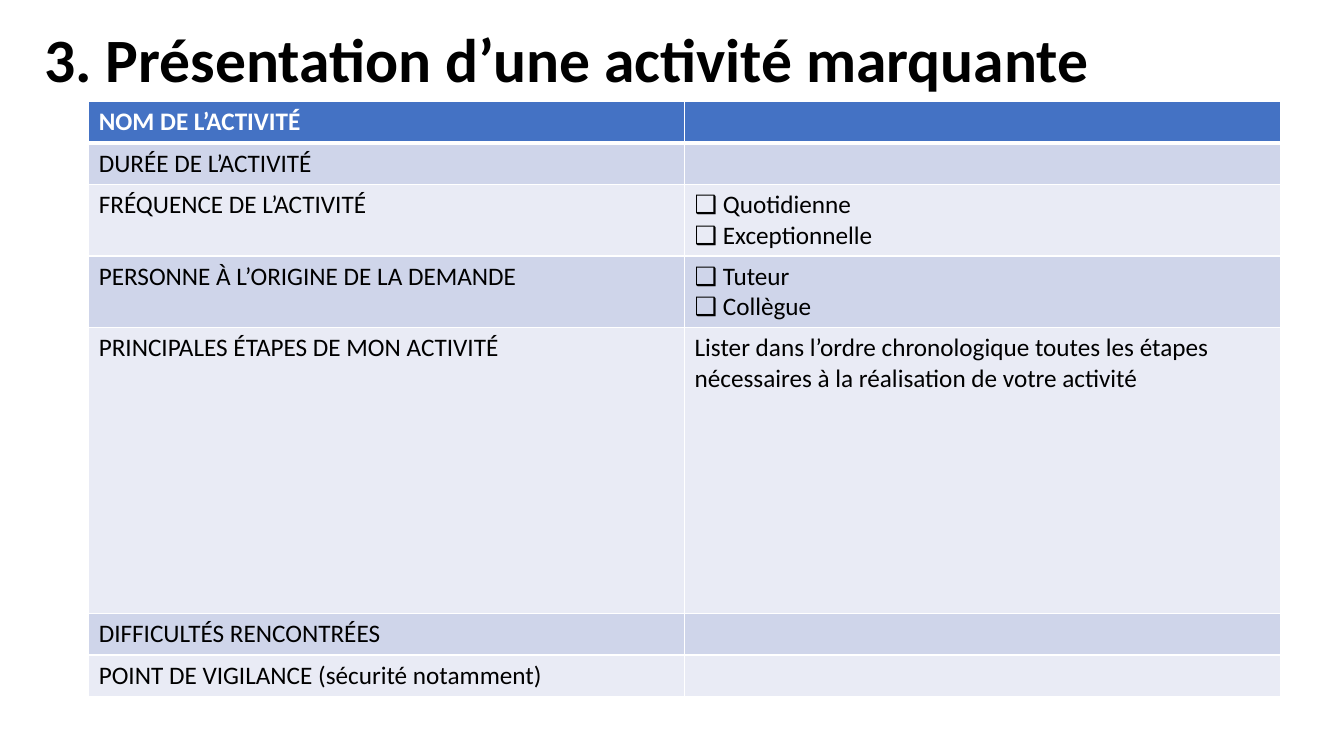
from dataclasses import dataclass

from lxml import etree
from pptx import Presentation
from pptx.dml.color import RGBColor
from pptx.enum import text
from pptx.oxml import ns
from pptx.util import Inches, Pt


@dataclass(frozen=True)
class Theme:
    font: str = "Calibri"
    title_size: int = 44
    body_size: int = 18
    ink: str = "000000"
    white: str = "FFFFFF"
    header: str = "4472C4"
    bands: tuple = ("E9EBF5", "CFD5EA")
    border: int = 1
    header_border: int = 3


THEME = Theme()
ROWS = [
    ("NOM DE L’ACTIVITÉ", "", 0.41),
    ("DURÉE DE L’ACTIVITÉ", "", 0.41),
    ("FRÉQUENCE DE L’ACTIVITÉ", "❑ Quotidienne\n❑ Exceptionnelle", 0.71),
    ("PERSONNE À L’ORIGINE DE LA DEMANDE", "❑ Tuteur\n❑ Collègue", 0.71),
    (
        "PRINCIPALES ÉTAPES DE MON ACTIVITÉ",
        "Lister dans l’ordre chronologique toutes les étapes "
        "nécessaires à la réalisation de votre activité",
        2.84,
    ),
    ("DIFFICULTÉS RENCONTRÉES", "", 0.41),
    ("POINT DE VIGILANCE (sécurité notamment)", "", 0.41),
]


def style_paragraph(paragraph, size, color, bold):
    font = paragraph.font
    font.name = THEME.font
    font.size = Pt(size)
    font.bold = bold
    font.color.rgb = RGBColor.from_string(color)


def add_title(slide, wording):
    shape = slide.shapes.add_textbox(Inches(0.34), Inches(-0.1), Inches(11.5), Inches(1.45))
    frame = shape.text_frame
    frame.word_wrap = True
    frame.vertical_anchor = text.MSO_ANCHOR.MIDDLE
    paragraph = frame.paragraphs[0]
    paragraph.text = wording
    paragraph.alignment = text.PP_ALIGN.JUSTIFY
    paragraph.line_spacing = 0.9
    style_paragraph(paragraph, THEME.title_size, THEME.ink, True)


def set_borders(cell, top, bottom):
    properties = cell._tc.get_or_add_tcPr()
    widths = {"lnL": THEME.border, "lnR": THEME.border, "lnT": top, "lnB": bottom}
    for position, (side, width) in enumerate(widths.items()):
        line = etree.Element(ns.qn(f"a:{side}"), w=str(Pt(width)))
        fill = etree.SubElement(line, ns.qn("a:solidFill"))
        etree.SubElement(fill, ns.qn("a:srgbClr"), val=THEME.white)
        properties.insert(position, line)


def fill_cell(cell, wording, row):
    is_header = row == 0
    cell.text = wording
    for paragraph in cell.text_frame.paragraphs:
        color = THEME.white if is_header else THEME.ink
        style_paragraph(paragraph, THEME.body_size, color, is_header)
    cell.fill.solid()
    background = THEME.header if is_header else THEME.bands[row % 2]
    cell.fill.fore_color.rgb = RGBColor.from_string(background)
    set_borders(
        cell,
        THEME.header_border if row == 1 else THEME.border,
        THEME.header_border if is_header else THEME.border,
    )


def add_activity_table(slide):
    total = sum(height for *_, height in ROWS)
    frame = slide.shapes.add_table(
        len(ROWS), 2, Inches(0.88), Inches(1.01), Inches(11.82), Inches(total)
    )
    table = frame.table
    for row, (label, answer, height) in enumerate(ROWS):
        table.rows[row].height = Inches(height)
        for column, wording in enumerate((label, answer)):
            fill_cell(table.cell(row, column), wording, row)


def main():
    presentation = Presentation()
    presentation.slide_width = Inches(13.33)
    presentation.slide_height = Inches(7.5)
    slide = presentation.slides.add_slide(presentation.slide_layouts[6])
    add_title(slide, "3. Présentation d’une activité marquante")
    add_activity_table(slide)
    presentation.save("out.pptx")


if __name__ == "__main__":
    main()
